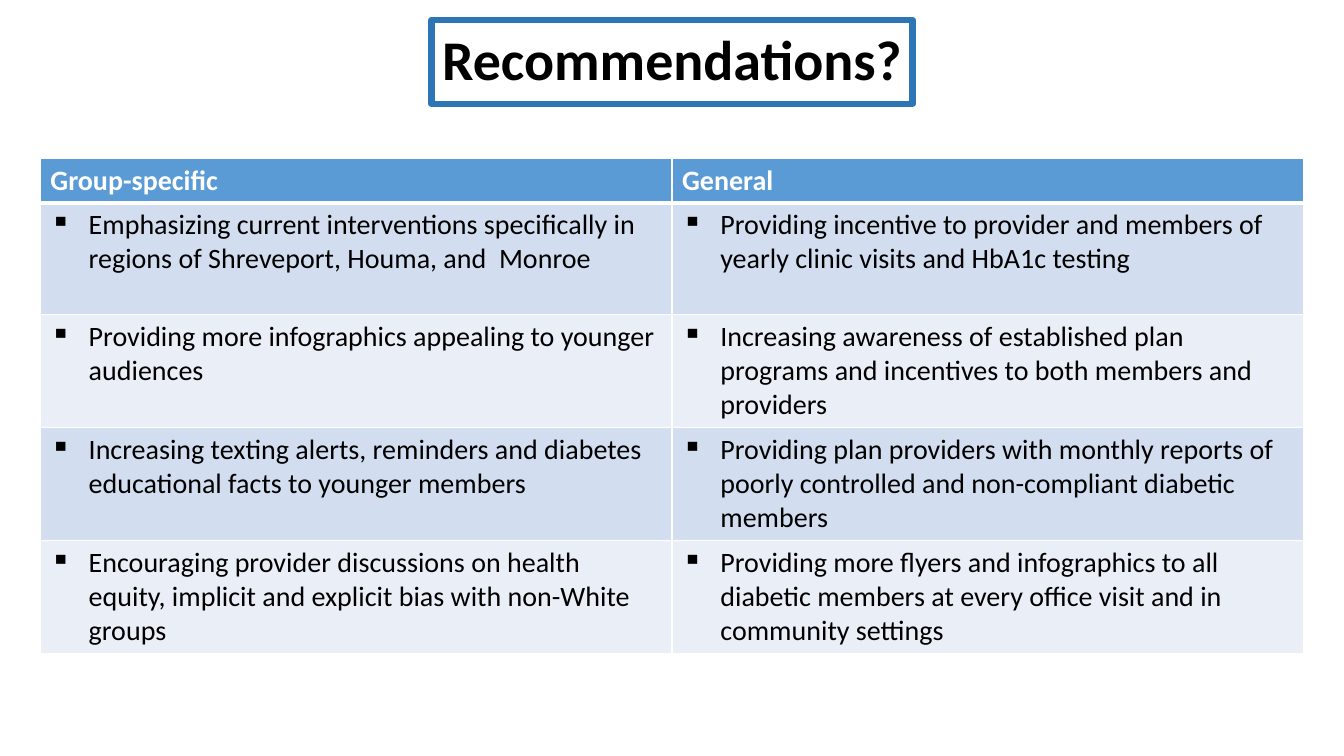
from lxml import etree
from pptx import Presentation
from pptx.dml.color import RGBColor
from pptx.enum.shapes import MSO_SHAPE
from pptx.enum.text import MSO_ANCHOR, PP_ALIGN
from pptx.oxml.ns import qn
from pptx.util import Emu, Inches, Pt

RECTANGLE = MSO_SHAPE.RECTANGLE
MIDDLE, CENTER = MSO_ANCHOR.MIDDLE, PP_ALIGN.CENTER

TITLE = "Recommendations?"
HEADINGS = ("Group-specific", "General")
RECOMMENDATIONS = [
    ("Emphasizing current interventions specifically in regions of Shreveport, Houma, and  Monroe",
     "Providing incentive to provider and members of yearly clinic visits and HbA1c testing"),
    ("Providing more infographics appealing to younger audiences",
     "Increasing awareness of established plan programs and incentives to both members and providers"),
    ("Increasing texting alerts, reminders and diabetes educational facts to younger members",
     "Providing plan providers with monthly reports of poorly controlled and non-compliant diabetic members"),
    ("Encouraging provider discussions on health equity, implicit and explicit bias with non-White groups",
     "Providing more flyers and infographics to all diabetic members at every office visit and in community settings"),
]
COLORS = {
    "text": "000000", "white": "FFFFFF", "frame": "2E75B6",
    "header": "5B9BD5", "dark_band": "D2DEEF", "light_band": "EAEFF7",
}
FONT = "Calibri"
SLIDE_W, SLIDE_H = Inches(13.33), Inches(7.5)
TITLE_W, TITLE_H, TITLE_TOP = Inches(4.77), Inches(0.83), Inches(0.2)
MARGIN, TABLE_TOP = Inches(0.4), Inches(1.57)
HEADER_H, ROW_H = Inches(0.43), Inches(1.11)
BULLET_INDENT = Inches(0.38)


def rgb(name):
    return RGBColor.from_string(COLORS[name])


def style_text(paragraph, size, color, bold):
    font = paragraph.font
    font.name, font.size, font.bold = FONT, Pt(size), bold
    font.color.rgb = rgb(color)


def add_bullet(paragraph):
    props = paragraph._p.get_or_add_pPr()
    props.set("marL", str(BULLET_INDENT))
    props.set("indent", str(-BULLET_INDENT))
    bullet = etree.Element(qn("a:buChar"), char="▪")
    # Bullets come before the default run properties in the schema.
    props.insert(0, bullet)


def add_borders(cell, bottom_width):
    props = cell._tc.get_or_add_tcPr()
    for side, width in (("L", 1), ("R", 1), ("T", 1), ("B", bottom_width)):
        line = etree.SubElement(props, qn(f"a:ln{side}"), w=str(Pt(width)))
        fill = etree.SubElement(line, qn("a:solidFill"))
        etree.SubElement(fill, qn("a:srgbClr"), val=COLORS["white"])


def add_title(slide):
    box = slide.shapes.add_shape(
        RECTANGLE, Emu((SLIDE_W - TITLE_W) // 2), TITLE_TOP, TITLE_W, TITLE_H)
    box.shadow.inherit = False
    box.fill.background()
    box.line.color.rgb = rgb("frame")
    box.line.width = Pt(4.5)
    frame = box.text_frame
    frame.word_wrap = False
    frame.vertical_anchor = MIDDLE
    frame.text = TITLE
    heading = frame.paragraphs[0]
    heading.alignment, heading.line_spacing = CENTER, 0.9
    style_text(heading, 40, "text", True)


def add_recommendations(slide):
    rows = [HEADINGS] + RECOMMENDATIONS
    table = slide.shapes.add_table(
        len(rows), len(HEADINGS), MARGIN, TABLE_TOP, SLIDE_W - 2 * MARGIN,
        HEADER_H + ROW_H * len(RECOMMENDATIONS)).table
    for r, texts in enumerate(rows):
        is_header = r == 0
        table.rows[r].height = HEADER_H if is_header else ROW_H
        band = "header" if is_header else "dark_band" if r % 2 else "light_band"
        for c, text in enumerate(texts):
            cell = table.cell(r, c)
            cell.text = text
            add_borders(cell, 3 if is_header else 1)
            cell.fill.solid()
            cell.fill.fore_color.rgb = rgb(band)
            paragraph = cell.text_frame.paragraphs[0]
            style_text(paragraph, 20, "white" if is_header else "text", is_header)
            if not is_header:
                add_bullet(paragraph)


def main():
    deck = Presentation()
    deck.slide_width, deck.slide_height = SLIDE_W, SLIDE_H
    slide = deck.slides.add_slide(deck.slide_layouts[6])
    add_title(slide)
    add_recommendations(slide)
    deck.save("out.pptx")


if __name__ == "__main__":
    main()
